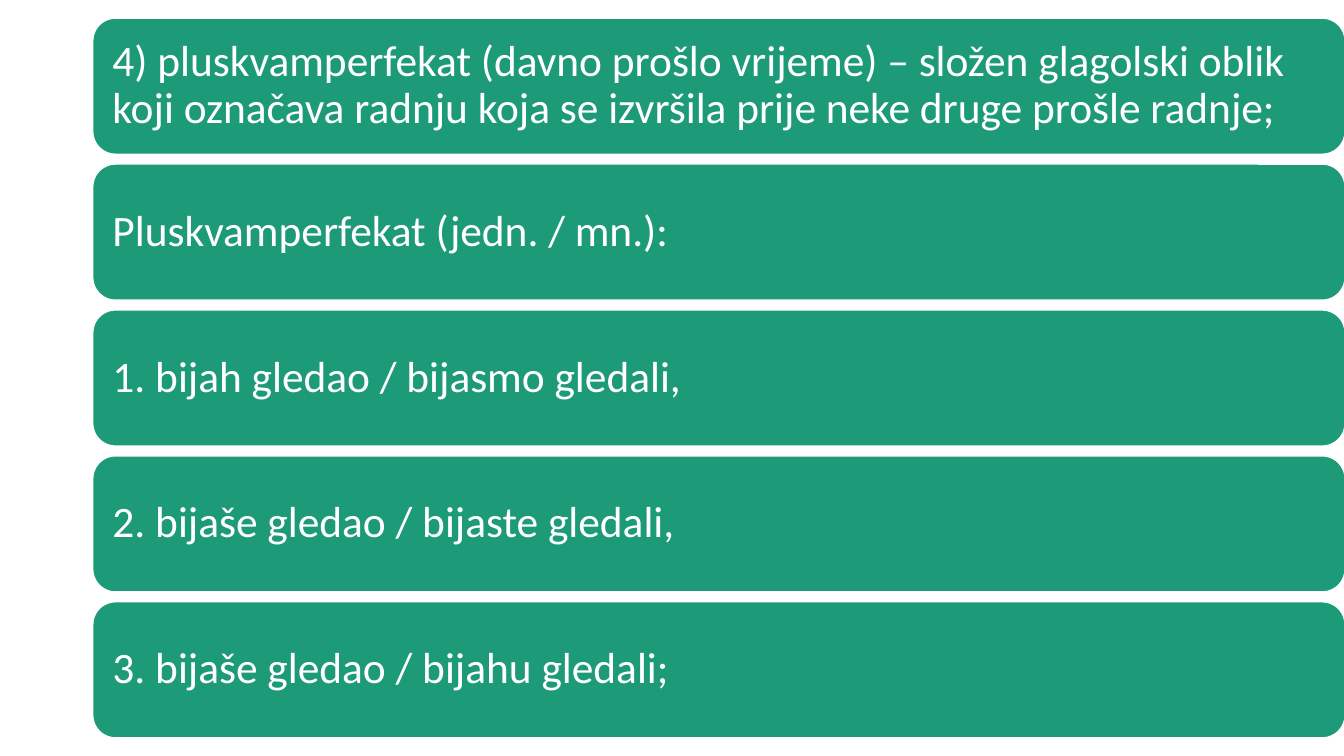
import pptx
import pptx.util
import pptx.dml.color
import pptx.enum.shapes
import pptx.enum.text

# Content
TENSE_LINES = [
    "4) pluskvamperfekat (davno prošlo vrijeme) – složen glagolski oblik "
    "koji označava radnju koja se izvršila prije neke druge prošle radnje;",
    "Pluskvamperfekat (jedn. / mn.):",
    "1. bijah gledao / bijasmo gledali,",
    "2. bijaše gledao / bijaste gledali,",
    "3. bijaše gledao / bijahu gledali;",
]
COLOURS = {"bar": "1D9A78", "white": "FFFFFF"}

# Layout in px, 100 to the inch
PX = 9144
SLIDE_W, SLIDE_H = 1333, 750
BAR_LEFT, BAR_W, BAR_H = 92, 1242, 135
FIRST_TOP, LAST_TOP = 18, 597
INSET = 13


def px(length):
    return pptx.util.Emu(round(length * PX))


def colour(name):
    return pptx.dml.color.RGBColor.from_string(COLOURS[name])


def add_bar(slide, top, line):
    bar = slide.shapes.add_shape(
        pptx.enum.shapes.MSO_SHAPE.ROUNDED_RECTANGLE,
        px(BAR_LEFT), px(top), px(BAR_W), px(BAR_H))
    bar.shadow.inherit = False
    bar.fill.solid()
    bar.fill.fore_color.rgb = colour("bar")
    bar.line.color.rgb = colour("white")
    bar.line.width = pptx.util.Pt(1)

    # Text inside the bar
    frame = bar.text_frame
    frame.word_wrap = True
    frame.vertical_anchor = pptx.enum.text.MSO_ANCHOR.MIDDLE
    frame.margin_left = frame.margin_right = px(INSET)
    frame.margin_top = frame.margin_bottom = px(INSET)
    paragraph = frame.paragraphs[0]
    paragraph.alignment = pptx.enum.text.PP_ALIGN.LEFT
    paragraph.line_spacing = 0.9
    run = paragraph.add_run()
    run.text = line
    run.font.name = "Calibri"
    run.font.size = pptx.util.Pt(31)
    run.font.color.rgb = colour("white")


def main():
    deck = pptx.Presentation()
    deck.slide_width, deck.slide_height = px(SLIDE_W), px(SLIDE_H)
    slide = deck.slides.add_slide(deck.slide_layouts[6])

    # Equally spaced bars
    pitch = (LAST_TOP - FIRST_TOP) / (len(TENSE_LINES) - 1)
    for row, line in enumerate(TENSE_LINES):
        add_bar(slide, FIRST_TOP + row * pitch, line)

    deck.save("out.pptx")


if __name__ == "__main__":
    main()
